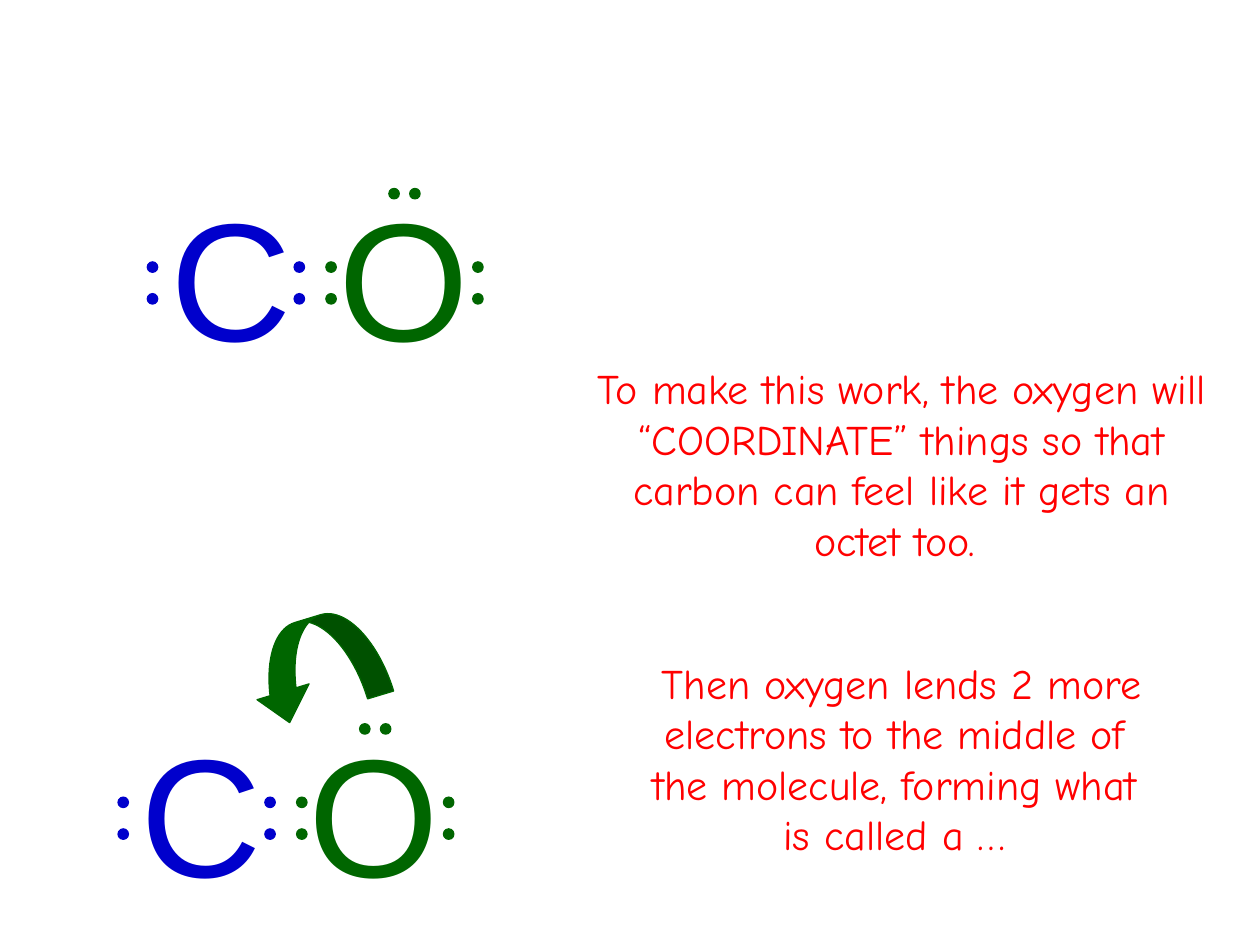
from dataclasses import dataclass

from pptx import Presentation
from pptx.dml.color import RGBColor
from pptx.enum.shapes import MSO_SHAPE
from pptx.enum.text import MSO_AUTO_SIZE, PP_ALIGN
from pptx.util import Cm, Pt


@dataclass(frozen=True)
class Theme:
    carbon: str = "0000CC"
    oxygen: str = "006600"
    note: str = "FF0000"
    atom_font: str = "Arial"
    note_font: str = "Comic Neue"
    atom_size: int = 96
    note_size: int = 24
    note_gap: int = 53
    line: float = 0.75


class Board:
    def __init__(self, slide, theme):
        self.slide = slide
        self.theme = theme

    def shape(self, kind, x, y, w, h, color):
        item = self.slide.shapes.add_shape(kind, Cm(x), Cm(y), Cm(w), Cm(h))
        item.shadow.inherit = False
        rgb = RGBColor.from_string(color)
        item.fill.solid()
        item.fill.fore_color.rgb = rgb
        item.line.color.rgb = rgb
        item.line.width = Pt(self.theme.line)
        return item

    def frame(self, x, y, w, h, wrap):
        box = self.slide.shapes.add_textbox(Cm(x), Cm(y), Cm(w), Cm(h))
        frame = box.text_frame
        frame.word_wrap = wrap
        frame.auto_size = MSO_AUTO_SIZE.SHAPE_TO_FIT_TEXT
        return frame

    def run(self, para, text, font, size, color):
        run = para.add_run()
        run.text = text
        run.font.name = font
        run.font.size = Pt(size)
        run.font.color.rgb = RGBColor.from_string(color)

    def pair(self, x, y, color, flat=False):
        """Two electrons, side by side if flat, else stacked."""
        dot = 0.21
        dx, dy = (0.42, 0) if flat else (0, 0.64)
        for i in range(2):
            self.shape(MSO_SHAPE.OVAL, x + i * dx, y + i * dy, dot, dot, color)

    def molecule(self, x, y):
        look = self.theme
        para = self.frame(x, y, 6.53, 4.32, False).paragraphs[0]
        for text, color in (("C ", look.carbon), ("O", look.oxygen)):
            self.run(para, text, look.atom_font, look.atom_size, color)
        for dx, color in ((-0.21, look.carbon), (2.75, look.carbon),
                          (3.39, look.oxygen), (6.35, look.oxygen)):
            self.pair(x + dx, y + 1.9, color)
        self.pair(x + 4.66, y + 0.42, look.oxygen, flat=True)

    def notes(self, x, y, w, h, texts):
        look = self.theme
        frame = self.frame(x, y, w, h, True)
        for i, lines in enumerate(texts):
            para = frame.add_paragraph() if i else frame.paragraphs[0]
            para.alignment = PP_ALIGN.CENTER
            para.space_before = Pt(look.note_gap if i else 0)
            for j, line in enumerate(lines):
                if j:
                    para.add_line_break()
                self.run(para, line, look.note_font, look.note_size, look.note)

    def arrow(self, x, y, w, h, turn):
        item = self.shape(MSO_SHAPE.CURVED_DOWN_ARROW, x, y, w, h,
                          self.theme.oxygen)
        for i, value in enumerate((0.288, 0.576, 0.333)):
            item.adjustments[i] = value
        item.rotation = turn
        item._element.spPr.xfrm.set("flipH", "1")


def main():
    deck = Presentation()
    deck.slide_width, deck.slide_height = Cm(25.4), Cm(19.05)
    board = Board(deck.slides.add_slide(deck.slide_layouts[6]), Theme())

    # Before sharing
    board.molecule(3.18, 3.38)

    # Explanation
    board.notes(11.61, 7.19, 13.13, 10.52, (
        ("To make this work, the oxygen will “COORDINATE” things so that "
         "carbon can feel like it gets an octet too. ",),
        ("Then oxygen lends 2 more electrons to the middle of ",
         "the molecule, forming what ",
         "is called a … "),
    ))

    # Oxygen lends a pair
    board.arrow(4.98, 12.47, 2.74, 1.9, 343.1)
    board.molecule(2.59, 14.17)

    deck.save("out.pptx")


if __name__ == "__main__":
    main()
